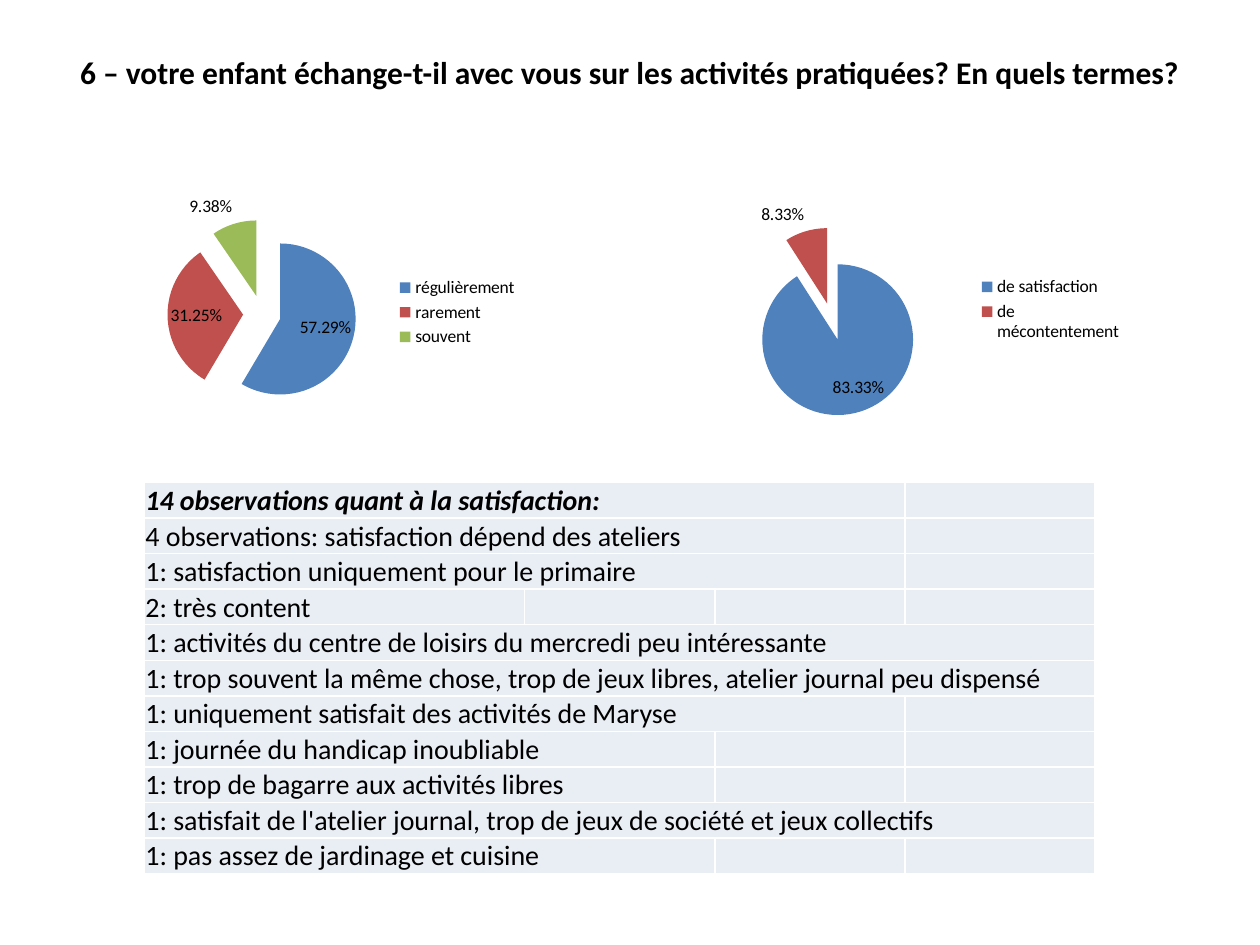
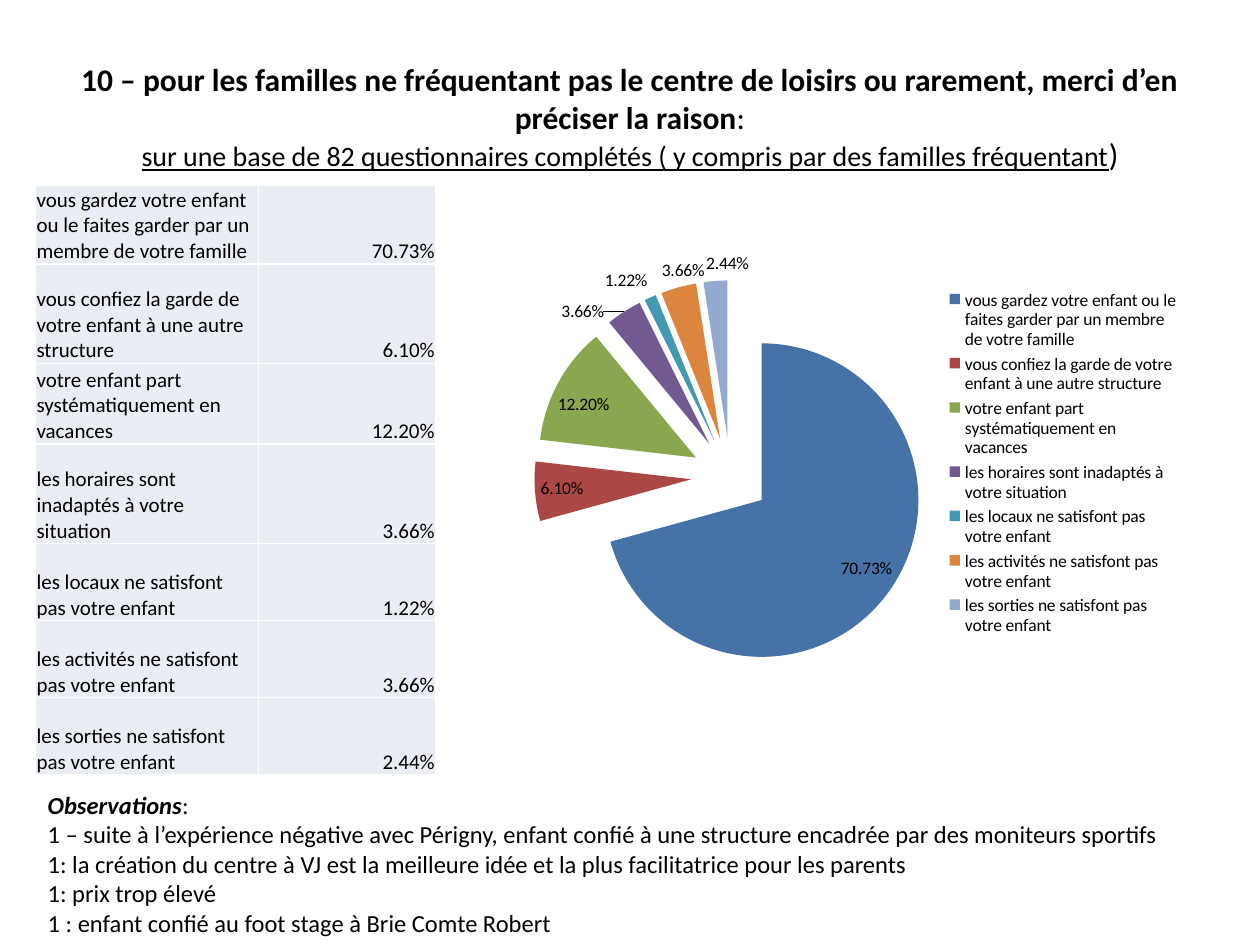
from lxml import etree
from pptx import Presentation
from pptx.chart.data import CategoryChartData
from pptx.dml.color import RGBColor
from pptx.enum.chart import XL_CHART_TYPE, XL_LABEL_POSITION, XL_LEGEND_POSITION
from pptx.enum.text import MSO_ANCHOR, PP_ALIGN
from pptx.oxml import parse_xml
from pptx.oxml.ns import nsdecls, qn
from pptx.util import Pt

FONT = "Calibri"
COLORS = {"text": "000000", "cell": "E9EDF4", "border": "FFFFFF"}
SHORT_PIE = ["4F81BD", "C0504D", "9BBB59"]
LONG_PIE = ["4672A8", "AB4744", "8AA64F", "725990", "4299B0", "DC853E", "93A9CF"]

# Each observation with the number of columns it spans
SATISFACTION = [
    ("14 observations quant à la satisfaction:", 3),
    ("4 observations: satisfaction dépend des ateliers", 3),
    ("1: satisfaction uniquement pour le primaire", 3),
    ("2: très content", 1),
    ("1: activités du centre de loisirs du mercredi peu intéressante", 4),
    ("1: trop souvent la même chose, trop de jeux libres, atelier journal peu dispensé", 4),
    ("1: uniquement satisfait des activités de Maryse", 3),
    ("1: journée du handicap inoubliable", 2),
    ("1: trop de bagarre aux activités libres", 2),
    ("1: satisfait de l'atelier journal, trop de jeux de société et jeux collectifs", 4),
    ("1: pas assez de jardinage et cuisine", 2),
]

# Each reason with its share and its row height
REASONS = [
    ("vous gardez votre enfant ou le faites garder par un membre de votre famille", 0.7073, 45),
    ("vous confiez la garde de votre enfant à une autre structure", 0.061, 57),
    ("votre enfant part systématiquement en vacances", 0.122, 46),
    ("les horaires sont inadaptés à votre situation", 0.0366, 57),
    ("les locaux ne satisfont pas votre enfant", 0.0122, 44),
    ("les activités ne satisfont pas votre enfant", 0.0366, 44),
    ("les sorties ne satisfont pas votre enfant", 0.0244, 44),
]

REMARKS = [
    "1 – suite à l’expérience négative avec Périgny, enfant confié à une structure "
    "encadrée par des moniteurs sportifs",
    "1: la création du centre à VJ est la meilleure idée et la plus facilitatrice pour les parents",
    "1: prix trop élevé",
    "1 : enfant confié au foot stage à Brie Comte Robert",
]


def rgb(color):
    return RGBColor.from_string(color)


def set_font(font, size):
    font.name = FONT
    font.size = Pt(size)
    font.color.rgb = rgb(COLORS["text"])


def add_run(p, text, size, **style):
    r = p.add_run()
    r.text = text
    set_font(r.font, size)
    for name, value in style.items():
        setattr(r.font, name, value)


def add_text_box(s, box, anchor):
    tf = s.shapes.add_textbox(*map(Pt, box)).text_frame
    tf.word_wrap = True
    tf.vertical_anchor = anchor
    return tf


def add_title(s, height):
    """Centred title paragraph, ready for its runs."""
    p = add_text_box(s, (36, 21.6, 648, height), MSO_ANCHOR.MIDDLE).paragraphs[0]
    p.alignment = PP_ALIGN.CENTER
    return p


def add_pie(s, box, cats, vals, colors, plot_box=None):
    data = CategoryChartData(number_format="0.00%")
    data.categories = cats
    data.add_series("Series 1", vals)
    chart = s.shapes.add_chart(XL_CHART_TYPE.PIE, *map(Pt, box), data).chart
    chart.has_title = False
    set_font(chart.font, 10)
    chart.has_legend = True
    chart.legend.position = XL_LEGEND_POSITION.RIGHT
    chart.legend.include_in_layout = False

    # Exploded slices, coloured one by one
    plot = chart.plots[0]
    plot.vary_by_categories = True
    series = plot.series[0]
    tx = series._element.find(qn("c:tx"))
    tx.addnext(parse_xml(f'<c:explosion {nsdecls("c")} val="25"/>'))
    for i, color in enumerate(colors[:len(vals)]):
        fill = series.points[i].format.fill
        fill.solid()
        fill.fore_color.rgb = rgb(color)

    labels = series.data_labels
    labels.show_value = True
    labels.number_format = "0.00%"
    labels.number_format_is_linked = False
    labels.position = XL_LABEL_POSITION.BEST_FIT

    # Fixed plot area, as fractions of the chart
    if plot_box:
        area = chart._chartSpace.find(".//" + qn("c:plotArea"))
        for old in area.findall(qn("c:layout")):
            area.remove(old)
        layout = etree.Element(qn("c:layout"))
        manual = etree.SubElement(layout, qn("c:manualLayout"))
        settings = [("layoutTarget", "inner"), ("xMode", "edge"), ("yMode", "edge")]
        for tag, val in settings + list(zip("xywh", plot_box)):
            etree.SubElement(manual, qn(f"c:{tag}")).set("val", str(val))
        area.insert(0, layout)


def style_cell(cell, size):
    cell.vertical_anchor = MSO_ANCHOR.BOTTOM
    cell.margin_left = cell.margin_right = cell.margin_top = Pt(0.7)
    cell.margin_bottom = Pt(0)
    tcPr = cell._tc.get_or_add_tcPr()
    for side in "LRTB":
        tcPr.append(parse_xml(
            f'<a:ln{side} {nsdecls("a")} w="12700"><a:solidFill>'
            f'<a:srgbClr val="{COLORS["border"]}"/></a:solidFill></a:ln{side}>'))
    cell.fill.solid()
    cell.fill.fore_color.rgb = rgb(COLORS["cell"])
    p = cell.text_frame.paragraphs[0]
    set_font(p.font, size)
    if not cell.text:
        p._p.get_or_add_endParaRPr().set("sz", str(size * 100))


def add_grid(s, left, top, widths, heights, rows, size):
    """Table filled with rows of texts."""
    shape = s.shapes.add_table(len(heights), len(widths), Pt(left), Pt(top),
                               Pt(sum(widths)), Pt(sum(heights)))
    table = shape.table
    table.first_row = table.horz_banding = False
    for col, width in zip(table.columns, widths):
        col.width = Pt(width)
    for row, height, texts in zip(table.rows, heights, rows):
        row.height = Pt(height)
        for cell, text in zip(row.cells, texts):
            if text:
                cell.text = text
            style_cell(cell, size)
    return table


def exchange_slide(prs):
    s = prs.slides.add_slide(prs.slide_layouts[6])
    add_run(add_title(s, 39), "6 – votre enfant échange-t-il avec vous sur les activités "
            "pratiquées? En quels termes?", 18, bold=True)

    # Frequency and tone of the exchanges
    add_pie(s, (70.6, 66.2, 232.6, 224.6), ["régulièrement", "rarement", "souvent"],
            [0.5729, 0.3125, 0.0938], SHORT_PIE, (0.108, 0.118, 0.464, 0.773))
    add_pie(s, (388, 105.8, 260.6, 141.8), ["de satisfaction", "de mécontentement"],
            [0.8333, 0.0833], SHORT_PIE)

    # Observations
    rows = [(text, "", "", "") for text, _ in SATISFACTION]
    table = add_grid(s, 82.4, 275.8, [217.4] + [108.7] * 3, [20.3] * len(rows), rows, 16)
    for i, (_, span) in enumerate(SATISFACTION):
        if span > 1:
            table.cell(i, 0).merge(table.cell(i, span - 1))
    heading = table.cell(0, 0).text_frame.paragraphs[0].font
    heading.bold = heading.italic = True


def reasons_slide(prs):
    s = prs.slides.add_slide(prs.slide_layouts[6])
    p = add_title(s, 90)
    add_run(p, "10 – pour les familles ne fréquentant pas le centre de loisirs ou rarement, "
            "merci d’en préciser la raison", 18, bold=True)
    add_run(p, ":", 18)
    p.add_line_break()
    add_run(p, "sur une base de 82 questionnaires complétés ( y compris par des familles "
            "fréquentant", 16, underline=True)
    add_run(p, ")", 18)

    # Reasons as a table and as a pie
    cats, vals, heights = zip(*REASONS)
    rows = [(cat, f"{val:.2%}") for cat, val in zip(cats, vals)]
    table = add_grid(s, 20.2, 105.8, [127.4, 101.5], heights, rows, 12)
    for i in range(len(rows)):
        table.cell(i, 1).text_frame.paragraphs[0].alignment = PP_ALIGN.RIGHT
    add_pie(s, (267.1, 105.8, 414, 317.5), cats, vals, LONG_PIE)

    # Remarks
    tf = add_text_box(s, (20.2, 447.8, 686.2, 92.2), MSO_ANCHOR.TOP)
    p = tf.paragraphs[0]
    add_run(p, "Observations", 14, bold=True, italic=True)
    add_run(p, ":", 14)
    for remark in REMARKS:
        p = tf.add_paragraph()
        p.text = remark
        set_font(p.font, 14)


def main():
    prs = Presentation()
    prs.slide_width, prs.slide_height = Pt(720), Pt(540)
    exchange_slide(prs)
    reasons_slide(prs)
    prs.save("out.pptx")


if __name__ == "__main__":
    main()
